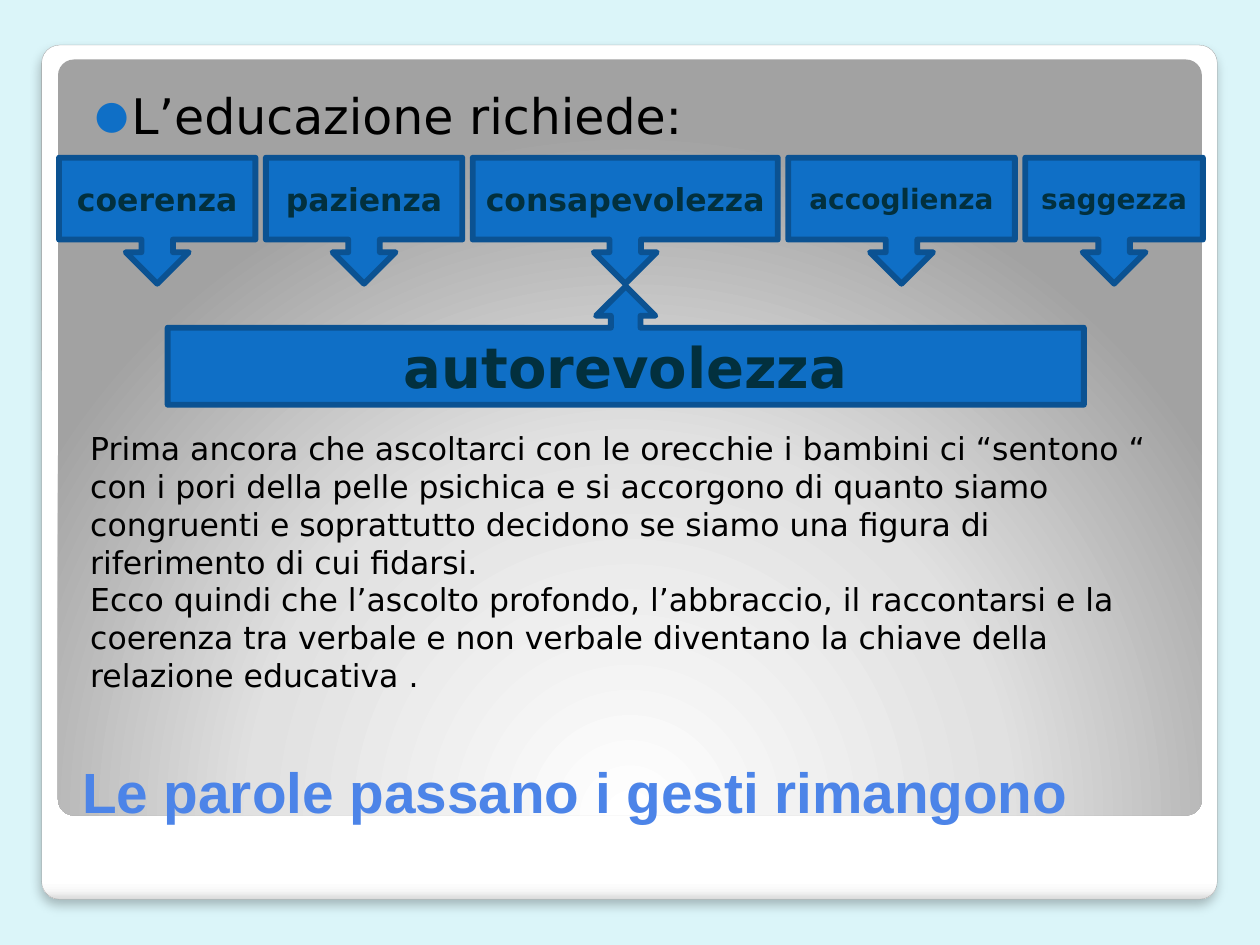
from dataclasses import dataclass

from lxml.etree import SubElement
from pptx import Presentation
from pptx.dml.color import RGBColor
from pptx.enum.shapes import MSO_SHAPE as Shape
from pptx.enum.text import MSO_ANCHOR as Anchor, MSO_AUTO_SIZE as AutoSize, PP_ALIGN as Align
from pptx.oxml import parse_xml
from pptx.oxml.ns import nsdecls, qn
from pptx.util import Cm, Pt


@dataclass(frozen=True)
class Theme:
    background: str = "DBF5F9"
    accent: str = "0F6FC6"
    accent_line: str = "0B5292"
    callout_text: str = "02303E"
    title: str = "4C84E8"
    text: str = "000000"
    panel_line: str = "A4A4A4"
    heading_font: str = "Arial"
    body_font: str = "DejaVu Sans"
    title_size: float = 32.4
    lead_size: float = 28
    key_size: float = 32
    text_size: float = 18
    small_size: float = 16


@dataclass(frozen=True)
class Box:
    left: float
    top: float
    width: float
    height: float

    def lengths(self) -> tuple:
        return Cm(self.left), Cm(self.top), Cm(self.width), Cm(self.height)


@dataclass(frozen=True)
class Quality:
    text: str
    width: float
    size: float


@dataclass(frozen=True)
class Panel:
    box: Box
    stops: tuple
    direction: str


THEME = Theme()
QUALITIES = (
    Quality("coerenza", 3.96, THEME.text_size),
    Quality("pazienza", 3.96, THEME.text_size),
    Quality("consapevolezza", 6.15, THEME.text_size),
    Quality("accoglienza", 4.57, THEME.small_size),
    Quality("saggezza", 3.58, THEME.small_size),
)
ROW_LEFT, ROW_TOP, ROW_HEIGHT, ROW_GAP = 1.19, 3.18, 2.54, 0.21
FRAME = Panel(
    Box(0.84, 0.91, 23.7, 17.22),
    ((0, "FFFFFF"), (98, "FFFFFF"), (99, "F7F7F7"), (100, "DADADA")),
    '<a:lin ang="5400000" scaled="0"/>',
)
BACKDROP = Panel(
    Box(1.17, 1.2, 23.06, 15.24),
    ((0, "FFFFFF"), (55, "E1E1E1"), (100, "A2A2A2")),
    '<a:path path="circle"><a:fillToRect l="50000" t="175000" r="50000" b="-75000"/></a:path>',
)
PARAGRAPHS = (
    "Prima ancora che ascoltarci con le orecchie i bambini ci “sentono “ con i pori "
    "della pelle psichica e si accorgono di quanto siamo congruenti e soprattutto "
    "decidono se siamo una figura di riferimento di cui fidarsi.",
    "Ecco quindi che l’ascolto profondo, l’abbraccio, il raccontarsi e la coerenza tra "
    "verbale e non verbale diventano la chiave della relazione educativa .",
)


def rgb(value: str) -> RGBColor:
    return RGBColor.from_string(value)


def write(p, text: str, *, size: float, color: str = THEME.text,
          font: str = THEME.body_font, bold: bool = False, align=Align.LEFT) -> None:
    p.alignment = align
    r = p.add_run()
    r.text = text
    r.font.size = Pt(size)
    r.font.name = font
    r.font.bold = bold
    r.font.color.rgb = rgb(color)


def place(sp, box: Box) -> None:
    sp.left, sp.top, sp.width, sp.height = box.lengths()


def add_panel(s, panel: Panel):
    sp = s.shapes.add_shape(Shape.ROUNDED_RECTANGLE, *panel.box.lengths())
    sp.adjustments[0] = 0.021
    sp.shadow.inherit = False
    sp.line.fill.background()
    sp.fill.background()
    stops = "".join(
        f'<a:gs pos="{pos * 1000}"><a:srgbClr val="{color}"/></a:gs>'
        for pos, color in panel.stops
    )
    gradient = parse_xml(
        f'<a:gradFill {nsdecls("a")} rotWithShape="1"><a:gsLst>{stops}</a:gsLst>'
        f"{panel.direction}</a:gradFill>"
    )
    props = sp.element.spPr
    props.replace(props.find(qn("a:noFill")), gradient)
    return sp


def add_panel_shadow(sp) -> None:
    effects = sp.element.spPr.find(qn("a:effectLst"))
    effects.append(parse_xml(
        f'<a:outerShdw {nsdecls("a")} blurRad="{Pt(6)}" dist="{Pt(4)}" dir="5400000" '
        'rotWithShape="0"><a:srgbClr val="000000"><a:alpha val="25000"/></a:srgbClr>'
        "</a:outerShdw>"
    ))


def add_callout(s, kind, box: Box, text: str, size: float) -> None:
    sp = s.shapes.add_shape(kind, *box.lengths())
    sp.shadow.inherit = False
    sp.fill.solid()
    sp.fill.fore_color.rgb = rgb(THEME.accent)
    sp.line.color.rgb = rgb(THEME.accent_line)
    sp.line.width = Pt(3.35)
    tf = sp.text_frame
    tf.word_wrap = True
    tf.margin_left = tf.margin_right = 0
    tf.vertical_anchor = Anchor.MIDDLE
    write(tf.paragraphs[0], text, size=size, color=THEME.callout_text,
          bold=True, align=Align.CENTER)


def add_bullet(p) -> None:
    props = p._p.get_or_add_pPr()
    props.set("marL", str(Cm(0.74)))
    props.set("indent", str(-Cm(0.74)))
    color = SubElement(props, qn("a:buClr"))
    SubElement(color, qn("a:srgbClr")).set("val", THEME.accent)
    SubElement(props, qn("a:buSzPct")).set("val", "80000")
    SubElement(props, qn("a:buFont")).set("typeface", THEME.body_font)
    SubElement(props, qn("a:buChar")).set("char", "●")


def fill_placeholders(s) -> None:
    title, body = s.placeholders
    place(title, Box(1.4, 13.84, 22.73, 2.92))
    tf = title.text_frame
    tf.auto_size = AutoSize.NONE
    tf.vertical_anchor = Anchor.BOTTOM
    write(tf.paragraphs[0], "Le parole passano i gesti rimangono", size=THEME.title_size,
          color=THEME.title, font=THEME.heading_font, bold=True)

    place(body, Box(1.4, 1.47, 22.73, 11.63))
    tf = body.text_frame
    tf.auto_size = AutoSize.NONE
    tf.margin_left = Cm(0.51)
    tf.margin_top = Cm(0.25)
    p = tf.paragraphs[0]
    p.space_before = Pt(2.5)
    add_bullet(p)
    write(p, "L’educazione richiede:", size=THEME.lead_size)


def main() -> None:
    prs = Presentation()
    prs.slide_width, prs.slide_height = Cm(25.4), Cm(19.05)
    s = prs.slides.add_slide(prs.slide_layouts[1])
    s.background.fill.solid()
    s.background.fill.fore_color.rgb = rgb(THEME.background)
    fill_placeholders(s)

    frame = add_panel(s, FRAME)
    frame.line.color.rgb = rgb(THEME.panel_line)
    frame.line.width = Pt(0.16)
    add_panel_shadow(frame)
    backdrop = add_panel(s, BACKDROP)
    for index, sp in enumerate((frame, backdrop), start=2):
        s.shapes.element.insert(index, sp.element)

    left = ROW_LEFT
    for quality in QUALITIES:
        box = Box(left, ROW_TOP, quality.width, ROW_HEIGHT)
        add_callout(s, Shape.DOWN_ARROW_CALLOUT, box, quality.text, quality.size)
        left += quality.width + ROW_GAP
    add_callout(s, Shape.UP_ARROW_CALLOUT, Box(3.38, 5.77, 18.47, 2.39),
                "autorevolezza", THEME.key_size)

    tf = s.shapes.add_textbox(*Box(1.57, 8.53, 21.82, 5.64).lengths()).text_frame
    tf.word_wrap = True
    tf.auto_size = AutoSize.SHAPE_TO_FIT_TEXT
    for i, text in enumerate(PARAGRAPHS):
        write(tf.add_paragraph() if i else tf.paragraphs[0], text, size=THEME.text_size)

    prs.save("out.pptx")


if __name__ == "__main__":
    main()
